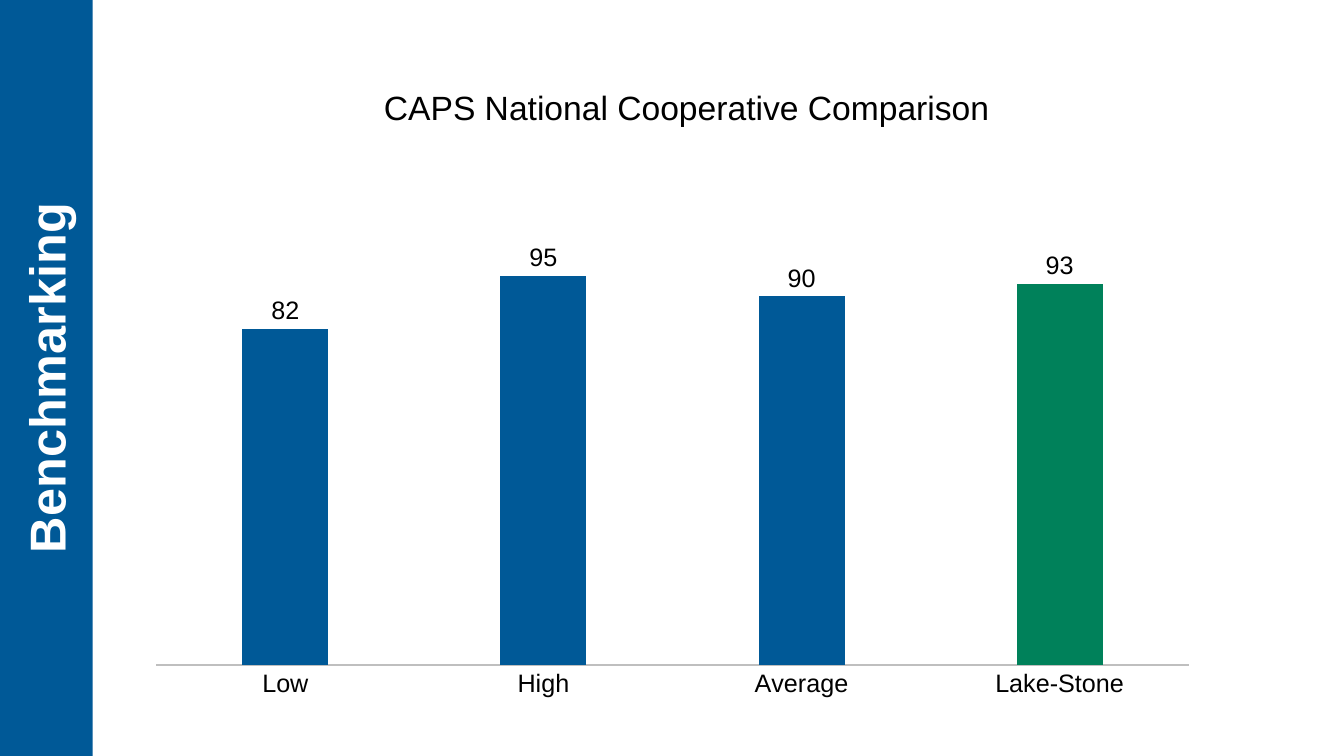
from lxml import etree
from pptx import Presentation
from pptx.chart.data import CategoryChartData
from pptx.dml.color import RGBColor
from pptx.enum.chart import XL_CHART_TYPE, XL_LABEL_POSITION, XL_TICK_MARK
from pptx.enum.shapes import MSO_SHAPE
from pptx.enum.text import MSO_ANCHOR, MSO_AUTO_SIZE, PP_ALIGN
from pptx.oxml.ns import qn
from pptx.util import Pt

PX = 9144
FONT = "Arial"
BLUE = RGBColor(0x00, 0x59, 0x97)
GREEN = RGBColor(0x00, 0x81, 0x5A)
GREY = RGBColor(0xBF, 0xBF, 0xBF)
BLACK = RGBColor(0, 0, 0)
WHITE = RGBColor(255, 255, 255)

COLUMNS = XL_CHART_TYPE.COLUMN_CLUSTERED
OUTSIDE_END = XL_LABEL_POSITION.OUTSIDE_END
NO_TICK = XL_TICK_MARK.NONE
RECTANGLE = MSO_SHAPE.RECTANGLE
MIDDLE = MSO_ANCHOR.MIDDLE
GROW = MSO_AUTO_SIZE.SHAPE_TO_FIT_TEXT
CENTER = PP_ALIGN.CENTER

SCORES = {"Low": 82, "High": 95, "Average": 90, "Lake-Stone": 93}
HIGHLIGHT = "Lake-Stone"
PLOT_AREA = {"x": 0, "y": 0.06, "w": 1, "h": 0.8}


def apply(target, **values):
    for key, value in values.items():
        setattr(target, key, value)


class SlideBuilder:
    def __init__(self, width, height):
        self.deck = Presentation()
        apply(self.deck, slide_width=width * PX, slide_height=height * PX)
        self.slide = self.deck.slides.add_slide(self.deck.slide_layouts[5])

    def style_font(self, font, size, color, bold=False):
        apply(font, name=FONT, size=Pt(size), bold=bold)
        font.color.rgb = color

    def fill_text(self, shape, text, size, color, bold=False, **frame_format):
        frame = shape.text_frame
        apply(frame, text=text, word_wrap=True, vertical_anchor=MIDDLE, **frame_format)
        paragraph = frame.paragraphs[0]
        paragraph.alignment = CENTER
        self.style_font(paragraph.runs[0].font, size, color, bold)

    def title(self, text, left, top, width, height):
        heading = self.slide.shapes.title
        apply(heading, left=left * PX, top=top * PX, width=width * PX, height=height * PX)
        self.fill_text(heading, text, 24, BLACK, auto_size=GROW)

    def sidebar(self, text, width, height):
        left, top = (width - height) // 2, (height - width) // 2
        band = self.slide.shapes.add_shape(
            RECTANGLE, left * PX, top * PX, height * PX, width * PX)
        apply(band, rotation=270)
        band.shadow.inherit = False
        band.fill.solid()
        band.fill.fore_color.rgb = BLUE
        band.line.fill.background()
        self.fill_text(band, text, 36, WHITE, bold=True, margin_top=0, margin_bottom=2 * PX)

    def column_chart(self, scores, highlight, left, top, width, height):
        data = CategoryChartData(number_format="0")
        data.categories = list(scores)
        data.add_series("Series 1", list(scores.values()))
        chart = self.slide.shapes.add_chart(
            COLUMNS, left * PX, top * PX, width * PX, height * PX, data).chart
        apply(chart, has_legend=False, has_title=False)
        self.style_font(chart.font, 18, BLACK)
        self.chart_axes(chart)
        self.chart_columns(chart.plots[0], list(scores).index(highlight))
        self.place_plot(chart)

    def chart_axes(self, chart):
        apply(chart.value_axis, visible=False, has_major_gridlines=False,
              minimum_scale=0, maximum_scale=100, major_unit=25)
        categories = chart.category_axis
        apply(categories, major_tick_mark=NO_TICK, minor_tick_mark=NO_TICK)
        self.style_font(categories.tick_labels.font, 18, BLACK)
        categories.format.line.color.rgb = GREY
        categories.format.line.width = Pt(1.5)

    def chart_columns(self, plot, highlight_index):
        apply(plot, gap_width=200, overlap=-15, vary_by_categories=False,
              has_data_labels=True)
        labels = plot.data_labels
        apply(labels, show_value=True, position=OUTSIDE_END,
              number_format="0", number_format_is_linked=False)
        self.style_font(labels.font, 18, BLACK)
        columns = plot.series[0]
        for part, color in ((columns, BLUE), (columns.points[highlight_index], GREEN)):
            part.format.fill.solid()
            part.format.fill.fore_color.rgb = color

    def place_plot(self, chart):
        plot_area = chart.plots[0]._element.getparent()
        for old_layout in plot_area.findall(qn("c:layout")):
            plot_area.remove(old_layout)
        layout = etree.Element(qn("c:layout"))
        plot_area.insert(0, layout)
        manual = etree.SubElement(layout, qn("c:manualLayout"))
        settings = {"layoutTarget": "inner", "xMode": "edge", "yMode": "edge", **PLOT_AREA}
        for tag, value in settings.items():
            etree.SubElement(manual, qn(f"c:{tag}")).set("val", str(value))

    def save(self):
        self.deck.save("out.pptx")


def main():
    builder = SlideBuilder(1333, 750)
    builder.column_chart(SCORES, HIGHLIGHT, 154, 223, 1026, 508)
    builder.title("CAPS National Cooperative Comparison", 168, 81, 1026, 50)
    builder.sidebar("Benchmarking", 92, 750)
    builder.save()


if __name__ == "__main__":
    main()
